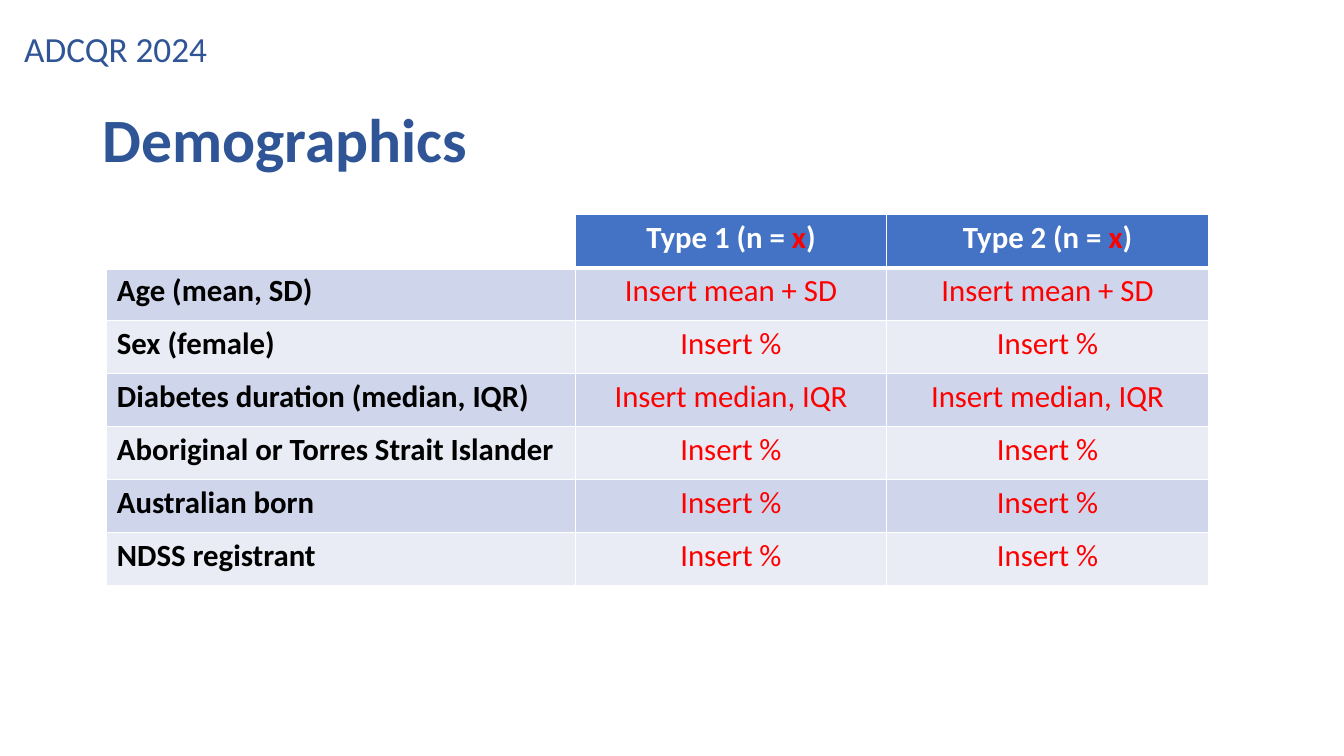
from dataclasses import dataclass

from pptx import Presentation
from pptx.dml.color import RGBColor
from pptx.enum.text import MSO_ANCHOR, MSO_AUTO_SIZE, PP_ALIGN
from pptx.oxml import parse_xml
from pptx.oxml.ns import nsdecls
from pptx.slide import Slide
from pptx.table import _Cell
from pptx.text.text import _Run
from pptx.util import Inches, Pt

FONT = "Calibri"
NAVY = RGBColor(0x2F, 0x55, 0x97)
BLUE = RGBColor(0x44, 0x72, 0xC4)
BAND_DARK = RGBColor(0xCF, 0xD5, 0xEA)
BAND_LIGHT = RGBColor(0xE9, 0xEB, 0xF5)
WHITE = RGBColor(0xFF, 0xFF, 0xFF)
BLACK = RGBColor(0, 0, 0)
RED = RGBColor(0xFF, 0, 0)

SLIDE_W, SLIDE_H = Inches(13.33), Inches(7.5)
TABLE_LEFT, TABLE_TOP = Inches(1.06), Inches(2.13)
COL_WIDTHS = [Inches(w) for w in (4.65, 3.08, 3.2)]
TABLE_HEIGHT = Inches(3.68)
THIN, THICK = Pt(1), Pt(3)


@dataclass(frozen=True)
class Measure:
    label: str
    value: str


MEASURES = [
    Measure("Age (mean, SD)", "Insert mean + SD"),
    Measure("Sex (female)", "Insert %"),
    Measure("Diabetes duration (median, IQR)", "Insert median, IQR"),
    Measure("Aboriginal or Torres Strait Islander", "Insert %"),
    Measure("Australian born", "Insert %"),
    Measure("NDSS registrant", "Insert %"),
]
GROUPS = ["Type 1", "Type 2"]


def style_run(r: _Run, size: float, color: RGBColor, bold: bool = False) -> None:
    """Set the font of one run."""
    r.font.name = FONT
    r.font.size = Pt(size)
    r.font.bold = bold
    r.font.color.rgb = color


def write_cell(cell: _Cell, parts: list[tuple[str, RGBColor]], bold: bool, align: PP_ALIGN) -> None:
    """Write coloured pieces of text into a cell."""
    p = cell.text_frame.paragraphs[0]
    p.alignment = align
    for text, color in parts:
        r = p.add_run()
        r.text = text
        style_run(r, 22, color, bold)


def style_cell(cell: _Cell, fill: RGBColor, top: int, bottom: int) -> None:
    """Fill a cell and give it white borders."""
    cell.fill.solid()
    cell.fill.fore_color.rgb = fill
    borders = [("lnL", THIN), ("lnR", THIN), ("lnT", top), ("lnB", bottom)]
    for i, (tag, width) in enumerate(borders):
        line = parse_xml(
            f'<a:{tag} {nsdecls("a")} w="{int(width)}"><a:solidFill>'
            f'<a:srgbClr val="{WHITE}"/></a:solidFill></a:{tag}>'
        )
        cell._tc.get_or_add_tcPr().insert(i, line)


def add_titles(s: Slide) -> None:
    """Place the report name and the slide heading."""
    title = s.shapes.title
    title.left, title.top = Inches(0.14), Inches(0.27)
    title.width, title.height = Inches(2.02), Inches(0.47)
    tf = title.text_frame
    tf.text = "ADCQR 2024"
    tf.auto_size = MSO_AUTO_SIZE.NONE
    tf.vertical_anchor = MSO_ANCHOR.MIDDLE
    tf.margin_right = 0
    p = tf.paragraphs[0]
    p.alignment = PP_ALIGN.LEFT
    p.line_spacing = 0.9
    style_run(p.runs[0], 25.2, NAVY)

    heading = s.shapes.add_textbox(Inches(0.92), Inches(0.95), Inches(11.5), Inches(0.84))
    tf = heading.text_frame
    tf.word_wrap = True
    tf.text = "Demographics"
    style_run(tf.paragraphs[0].runs[0], 44, NAVY, True)


def add_demographics(s: Slide) -> None:
    """Draw the table of measures by diabetes type."""
    rows = len(MEASURES) + 1
    frame = s.shapes.add_table(
        rows, len(COL_WIDTHS), TABLE_LEFT, TABLE_TOP, sum(COL_WIDTHS), TABLE_HEIGHT
    )
    table = frame.table
    for column, width in zip(table.columns, COL_WIDTHS):
        column.width = width

    style_cell(table.cell(0, 0), WHITE, THIN, THICK)
    for col, group in enumerate(GROUPS, 1):
        cell = table.cell(0, col)
        style_cell(cell, BLUE, THIN, THICK)
        parts = [(f"{group} (n = ", WHITE), ("x", RED), (")", WHITE)]
        write_cell(cell, parts, True, PP_ALIGN.CENTER)

    for row, measure in enumerate(MEASURES, 1):
        for cell in table.rows[row].cells:
            band = BAND_DARK if row % 2 else BAND_LIGHT
            style_cell(cell, band, THICK if row == 1 else THIN, THIN)
        write_cell(table.cell(row, 0), [(measure.label, BLACK)], True, PP_ALIGN.LEFT)
        for col in range(1, len(COL_WIDTHS)):
            write_cell(table.cell(row, col), [(measure.value, RED)], False, PP_ALIGN.CENTER)


def main() -> None:
    """Build and save the slide."""
    prs = Presentation()
    prs.slide_width, prs.slide_height = SLIDE_W, SLIDE_H
    s = prs.slides.add_slide(prs.slide_layouts[5])
    add_titles(s)
    add_demographics(s)
    prs.save("out.pptx")


if __name__ == "__main__":
    main()
